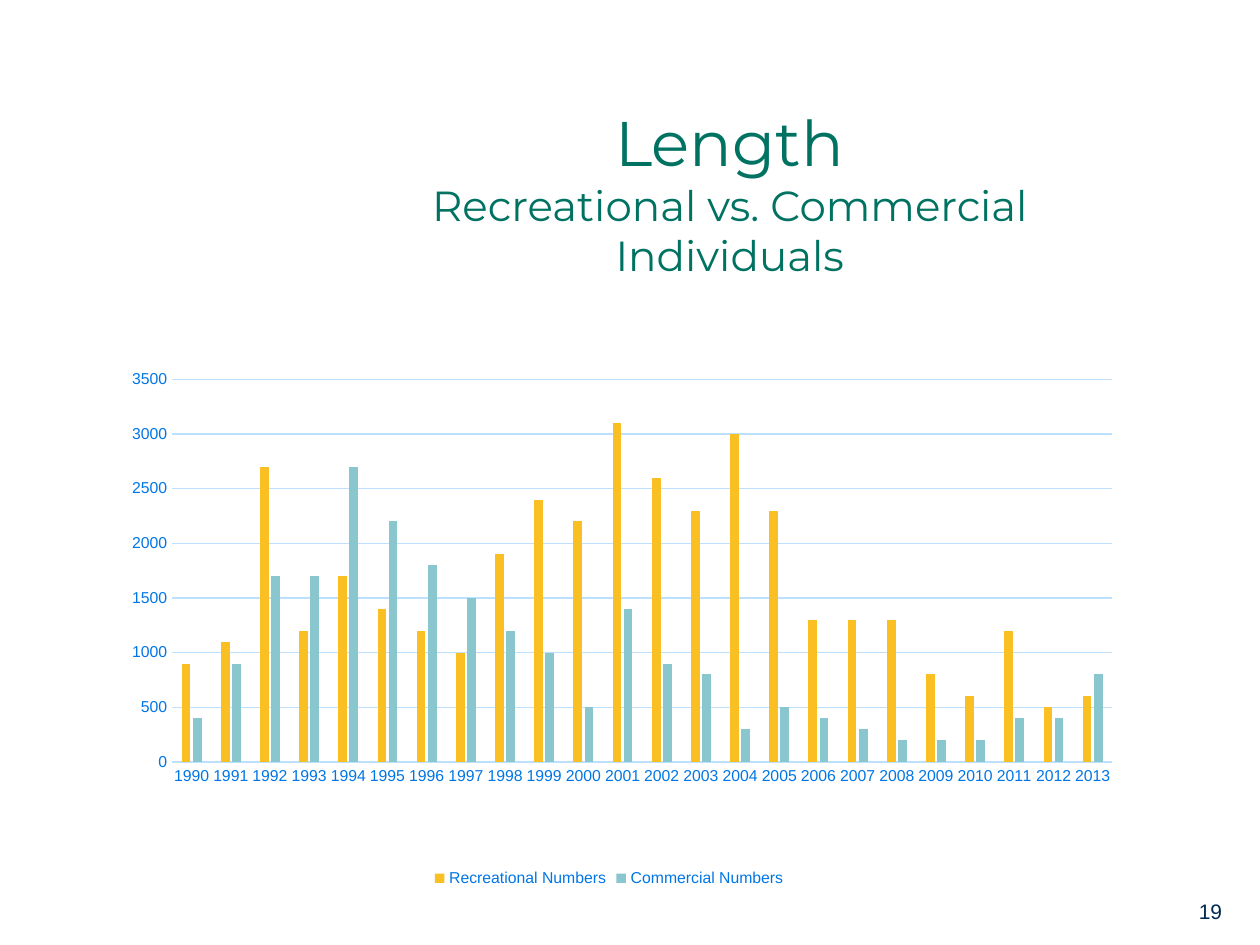
import pptx
import pptx.chart.data
import pptx.dml.color
import pptx.enum.chart
import pptx.enum.text
import pptx.oxml
import pptx.oxml.ns
import pptx.util

Pt = pptx.util.Pt
RGBColor = pptx.dml.color.RGBColor

NAVY = RGBColor(0x00, 0x29, 0x50)
GREEN = RGBColor(0x00, 0x72, 0x62)
BLUE = RGBColor(0x00, 0x76, 0xE6)
PALE_BLUE = RGBColor(0xBE, 0xE0, 0xFF)
YELLOW = RGBColor(0xFA, 0xBF, 0x22)
TEAL = RGBColor(0x8A, 0xC6, 0xCD)

YEARS = [str(year) for year in range(1990, 2014)]
SERIES = [
    ("Recreational Numbers", YELLOW,
     [900, 1100, 2700, 1200, 1700, 1400, 1200, 1000, 1900, 2400, 2200, 3100,
      2600, 2300, 3000, 2300, 1300, 1300, 1300, 800, 600, 1200, 500, 600]),
    ("Commercial Numbers", TEAL,
     [400, 900, 1700, 1700, 2700, 2200, 1800, 1500, 1200, 1000, 500, 1400,
      900, 800, 300, 500, 400, 300, 200, 200, 200, 400, 400, 800]),
]


def set_attrs(obj, **values):
    for name, value in values.items():
        setattr(obj, name, value)


def style_font(font, name, size, color):
    set_attrs(font, name=name, size=Pt(size))
    font.color.rgb = color


def style_line(line, color):
    line.color.rgb = color
    line.width = Pt(0.75)


def add_text(slide, box, lines, font_name, color, **frame):
    """Add one paragraph per (text, size) pair."""
    tf = slide.shapes.add_textbox(*map(Pt, box)).text_frame
    set_attrs(tf, word_wrap=True, **frame)
    for i, (text, size) in enumerate(lines):
        p = tf.add_paragraph() if i else tf.paragraphs[0]
        r = p.add_run()
        r.text = text
        style_font(r.font, font_name, size, color)
    return tf


def add_title(slide, box):
    lines = [("Length", 36), ("Recreational vs. Commercial", 24), ("Individuals", 24)]
    tf = add_text(slide, box, lines, "Montserrat", GREEN, margin_bottom=Pt(30),
                  vertical_anchor=pptx.enum.text.MSO_ANCHOR.MIDDLE)
    for p in tf.paragraphs:
        p.alignment = pptx.enum.text.PP_ALIGN.CENTER


def set_plot_layout(chart, x, y, w, h):
    """Fix the inner plot area, as fractions of the chart."""
    plot_area = chart._chartSpace.chart.plotArea
    for old in plot_area.findall(pptx.oxml.ns.qn("c:layout")):
        plot_area.remove(old)
    sizes = "".join(f'<c:{tag} val="{value}"/>'
                    for tag, value in zip("xywh", (x, y, w, h)))
    plot_area.insert(0, pptx.oxml.parse_xml(
        f'<c:layout {pptx.oxml.ns.nsdecls("c")}><c:manualLayout>'
        '<c:layoutTarget val="inner"/><c:xMode val="edge"/><c:yMode val="edge"/>'
        f'{sizes}</c:manualLayout></c:layout>'))


def add_catch_chart(slide, box):
    data = pptx.chart.data.CategoryChartData()
    data.categories = YEARS
    for name, _, values in SERIES:
        data.add_series(name, values)
    chart = slide.shapes.add_chart(
        pptx.enum.chart.XL_CHART_TYPE.COLUMN_CLUSTERED, *map(Pt, box), data).chart
    set_attrs(chart, has_title=False, has_legend=True)
    style_font(chart.font, "Arial", 10, NAVY)

    set_attrs(chart.legend, position=pptx.enum.chart.XL_LEGEND_POSITION.BOTTOM,
              include_in_layout=False)
    style_font(chart.legend.font, "Arial", 9, BLUE)

    plot = chart.plots[0]
    set_attrs(plot, gap_width=219, overlap=-27, vary_by_categories=False)
    for series, (_, color, _) in zip(plot.series, SERIES):
        series.invert_if_negative = False
        series.format.fill.solid()
        series.format.fill.fore_color.rgb = color

    no_tick = pptx.enum.chart.XL_TICK_MARK.NONE
    for axis in (chart.category_axis, chart.value_axis):
        set_attrs(axis, major_tick_mark=no_tick, minor_tick_mark=no_tick)
        style_font(axis.tick_labels.font, "Arial", 9, BLUE)
    style_line(chart.category_axis.format.line, PALE_BLUE)
    set_attrs(chart.value_axis, minimum_scale=0, maximum_scale=3500, major_unit=500)
    chart.value_axis.format.line.fill.background()
    style_line(chart.value_axis.major_gridlines.format.line, PALE_BLUE)
    set_plot_layout(chart, 0.092, 0.095, 0.878, 0.675)


def main():
    prs = pptx.Presentation()
    set_attrs(prs, slide_width=Pt(720), slide_height=Pt(540))
    slide = prs.slides.add_slide(prs.slide_layouts[6])
    add_text(slide, (678, 510, 42, 22), [("19", 12)], "Arial", NAVY)
    add_title(slide, (180, 90, 474, 66))
    add_catch_chart(slide, (42, 186, 612, 324))
    prs.save("out.pptx")


if __name__ == "__main__":
    main()
